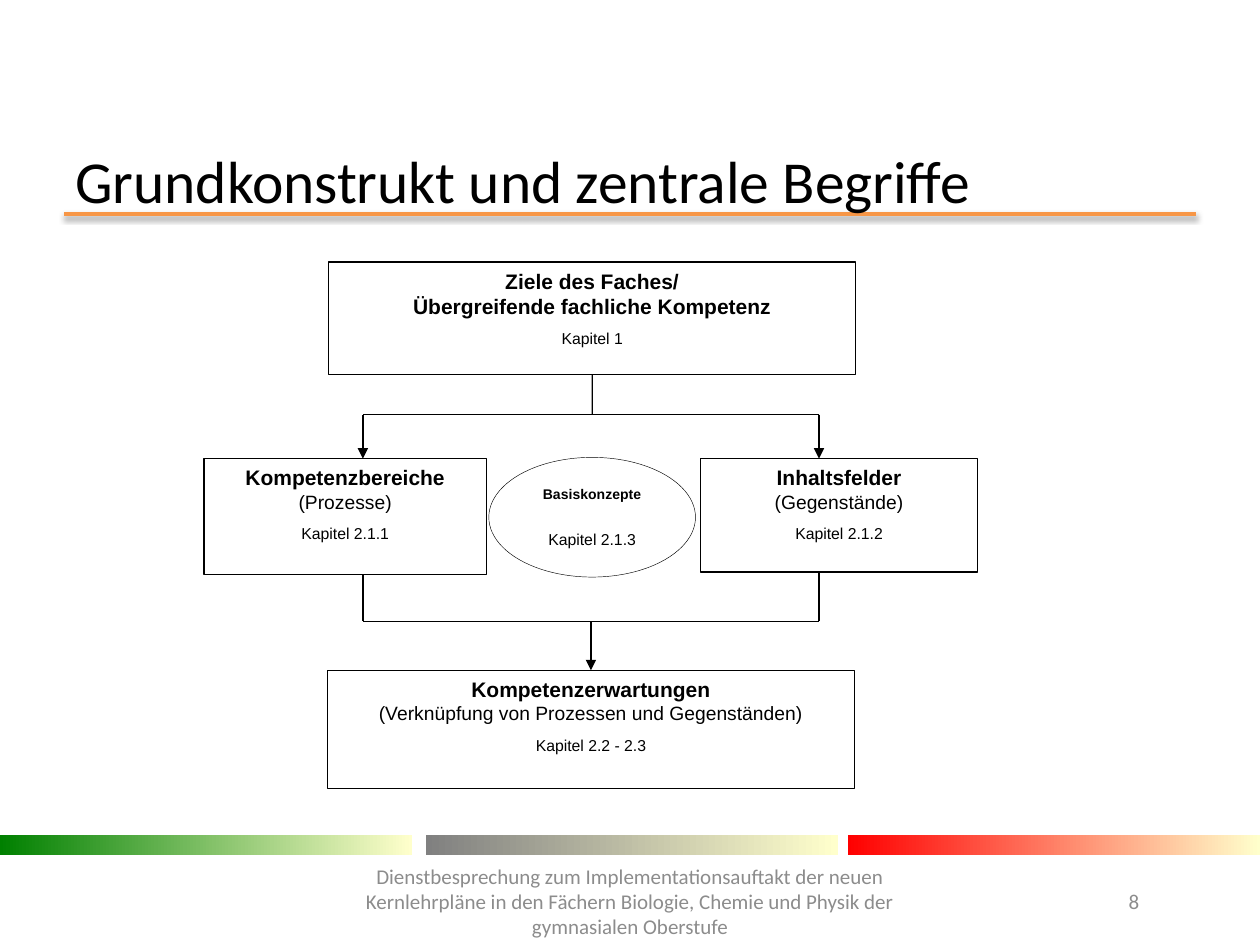
from lxml import etree
from pptx import Presentation
from pptx.dml.color import RGBColor
from pptx.enum.shapes import MSO_CONNECTOR as Connector, MSO_SHAPE as Shape
from pptx.enum.text import MSO_ANCHOR as Anchor, PP_ALIGN as Align
from pptx.oxml import parse_xml
from pptx.oxml.ns import nsdecls, qn
from pptx.util import Inches, Pt

COLORS = {
    "black": "000000", "white": "FFFFFF", "footer": "8C8C8C", "rule": "F79646",
    "green": "008000", "gray": "808080", "red": "FF0000", "cream": "FFFFCC",
}
RULE_SHADOW = (
    f'<a:effectLst {nsdecls("a")}><a:outerShdw blurRad="40000" dist="20000" dir="5400000" '
    'rotWithShape="0"><a:srgbClr val="000000"><a:alpha val="38000"/></a:srgbClr>'
    '</a:outerShdw></a:effectLst>'
)


def rgb(name):
    return RGBColor.from_string(COLORS[name])


class SlideBuilder:
    """Holds the diagram style and the slide being filled."""

    def __init__(self, page, font="Arial", line_width=0.75):
        self.page = page
        self.font = font
        self.line_width = line_width

    def set_text(self, frame, rows, font, color="black", align=Align.CENTER):
        """Fill a frame with (text, size, bold, space before) rows."""
        frame.word_wrap = True
        for index, (text, size, bold, before) in enumerate(rows):
            para = frame.paragraphs[0] if index == 0 else frame.add_paragraph()
            para.text = text
            para.alignment = align
            if before:
                para.space_before = Pt(before)
            para.font.name = font
            para.font.size = Pt(size)
            para.font.bold = bold
            para.font.color.rgb = rgb(color)

    def label(self, place, text, size, color, align=Align.LEFT, anchor=Anchor.MIDDLE):
        box = self.page.shapes.add_textbox(*map(Inches, place))
        box.text_frame.vertical_anchor = anchor
        self.set_text(box.text_frame, [(text, size, False, 0)], "Calibri", color, align)

    def node(self, place, rows, kind=Shape.RECTANGLE, anchor=Anchor.TOP, width=None):
        shape = self.page.shapes.add_shape(kind, *map(Inches, place))
        shape.shadow.inherit = False
        shape.fill.solid()
        shape.fill.fore_color.rgb = rgb("white")
        shape.line.color.rgb = rgb("black")
        shape.line.width = Pt(width or self.line_width)
        shape.text_frame.vertical_anchor = anchor
        self.set_text(shape.text_frame, rows, self.font)
        return shape

    def band(self, place, color):
        """Draw a bar that fades to cream on the right."""
        bar = self.page.shapes.add_shape(Shape.RECTANGLE, *map(Inches, place))
        bar.shadow.inherit = False
        bar.line.fill.background()
        bar.fill.gradient()
        bar.fill.gradient_angle = 0
        for stop, name in zip(bar.fill.gradient_stops, (color, "cream")):
            stop.color.rgb = rgb(name)

    def line(self, start, end, color="black", width=None, arrow=False, shadow=False):
        link = self.page.shapes.add_connector(
            Connector.STRAIGHT, *map(Inches, (*start, *end)))
        link.line.color.rgb = rgb(color)
        link.line.width = Pt(width or self.line_width)
        properties = link._element.spPr
        if arrow:
            etree.SubElement(properties.find(qn("a:ln")), qn("a:tailEnd"), type="triangle")
        if shadow:
            properties.append(parse_xml(RULE_SHADOW))
        else:
            etree.SubElement(properties, qn("a:effectLst"))
        return link


def build_frame(slide):
    """Draw the title, its rule, the colour bands and the footer."""
    slide.line((0.51, 1.7), (9.49, 1.7), "rule", 2, shadow=True)
    for left, color in ((0, "green"), (3.38, "gray"), (6.73, "red")):
        slide.band((left, 6.63, 3.27, 0.16), color)
    slide.label((0.5, 1.23, 9, 0.39), "Grundkonstrukt und zentrale Begriffe", 34, "black")
    slide.label(
        (2.56, 6.87, 4.88, 0.56),
        "Dienstbesprechung zum Implementationsauftakt der neuen Kernlehrpläne in den "
        "Fächern Biologie, Chemie und Physik der gymnasialen Oberstufe",
        12, "footer", Align.CENTER)
    slide.label((8.86, 7, 0.64, 0.4), "8", 12, "footer", anchor=Anchor.TOP)


def build_diagram(slide):
    def topic(place, heading, detail, chapter, detail_size=11, detail_bold=False):
        return slide.node(place, [
            (heading, 12, True, 0),
            (detail, detail_size, detail_bold, 0),
            (chapter, 9, False, 6),
        ])

    goals = topic((2.61, 2.08, 4.18, 0.89), "Ziele des Faches/",
                  "Übergreifende fachliche Kompetenz", "Kapitel 1", 12, True)
    topic((1.62, 3.64, 2.24, 0.92), "Kompetenzbereiche", "(Prozesse)", "Kapitel 2.1.1")
    topic((5.56, 3.64, 2.2, 0.9), "Inhaltsfelder", "(Gegenstände)", "Kapitel 2.1.2")
    expectations = topic((2.6, 5.32, 4.18, 0.94), "Kompetenzerwartungen",
                         "(Verknüpfung von Prozessen und Gegenständen)",
                         "Kapitel 2.2 - 2.3")
    slide.node((3.88, 3.63, 1.64, 0.95),
               [("Basiskonzepte", 8, True, 0), ("Kapitel 2.1.3", 9, False, 16)],
               Shape.OVAL, Anchor.MIDDLE, 0.25)

    split, merge = 3.29, 4.93
    slide.line((4.7, 2.97), (4.7, split)).begin_connect(goals, 2)
    slide.line((4.69, merge), (4.69, 5.32), arrow=True).end_connect(expectations, 0)
    for side, bottom in ((2.88, 4.56), (6.5, 4.54)):
        slide.line((4.69, split), (side, split))
        slide.line((side, split), (side, 3.64), arrow=True)
        slide.line((side, bottom), (side, merge))
        slide.line((side, merge), (4.69, merge))


def main():
    deck = Presentation()
    deck.slide_width, deck.slide_height = Inches(10), Inches(7.5)
    slide = SlideBuilder(deck.slides.add_slide(deck.slide_layouts[6]))
    build_frame(slide)
    build_diagram(slide)
    deck.save("out.pptx")


if __name__ == "__main__":
    main()
